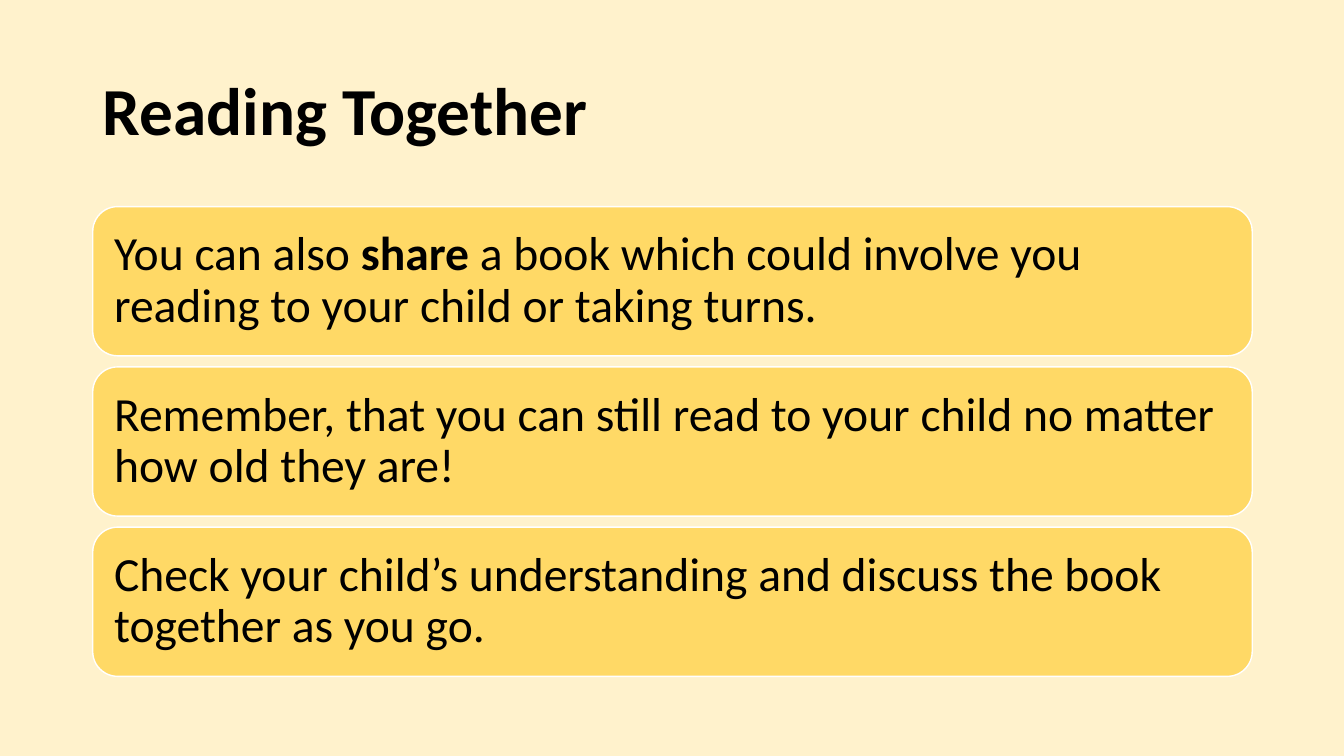
import pptx
import pptx.util
import pptx.dml.color
import pptx.enum.shapes
import pptx.enum.text

Inches = pptx.util.Inches
Pt = pptx.util.Pt


def color(code):
    return pptx.dml.color.RGBColor.from_string(code)


class Deck:
    font = "Calibri"
    ink = "000000"
    paper = "FFF2CC"
    gold = "FFD966"
    edge = "FFFFFF"
    left = 0.92
    width = 11.5

    def __init__(self):
        self.show = pptx.Presentation()
        self.show.slide_width = Inches(13.33)
        self.show.slide_height = Inches(7.5)
        self.slide = self.show.slides.add_slide(self.show.slide_layouts[5])
        fill = self.slide.background.fill
        fill.solid()
        fill.fore_color.rgb = color(self.paper)

    def place(self, shape, top, height):
        shape.left, shape.top = Inches(self.left), Inches(top)
        shape.width, shape.height = Inches(self.width), Inches(height)

    def label(self, shape, runs, size):
        frame = shape.text_frame
        frame.word_wrap = True
        frame.auto_size = pptx.enum.text.MSO_AUTO_SIZE.NONE
        frame.vertical_anchor = pptx.enum.text.MSO_ANCHOR.MIDDLE
        para = frame.paragraphs[0]
        para.alignment = pptx.enum.text.PP_ALIGN.LEFT
        para.line_spacing = 0.9
        for text, bold in runs:
            run = para.add_run()
            run.text = text
            run.font.name = self.font
            run.font.size = Pt(size)
            run.font.bold = bold
            run.font.color.rgb = color(self.ink)

    def title(self, text):
        shape = self.slide.shapes.title
        self.place(shape, 0.4, 1.45)
        self.label(shape, [(text, True)], 48)

    def card(self, top, height, runs):
        shape = self.slide.shapes.add_shape(
            pptx.enum.shapes.MSO_SHAPE.ROUNDED_RECTANGLE, 0, 0, 0, 0)
        self.place(shape, top, height)
        shape.shadow.inherit = False
        shape.fill.solid()
        shape.fill.fore_color.rgb = color(self.gold)
        shape.line.color.rgb = color(self.edge)
        shape.line.width = Pt(1)
        frame = shape.text_frame
        frame.margin_left = frame.margin_right = Inches(0.14)
        frame.margin_top = frame.margin_bottom = Inches(0.14)
        self.label(shape, runs, 34)


def main():
    deck = Deck()
    deck.title("Reading Together")
    tips = [
        [("You can also ", False), ("share", True),
         (" a book which could involve you reading to your child or taking turns.", False)],
        [("Remember, that you can still read to your child no matter how old they are!", False)],
        [("Check your child’s understanding and discuss the book together as you go.", False)],
    ]
    top, height, step = 2.05, 1.48, 1.59
    for row, runs in enumerate(tips):
        deck.card(top + row * step, height, runs)
    deck.show.save("out.pptx")


if __name__ == "__main__":
    main()
